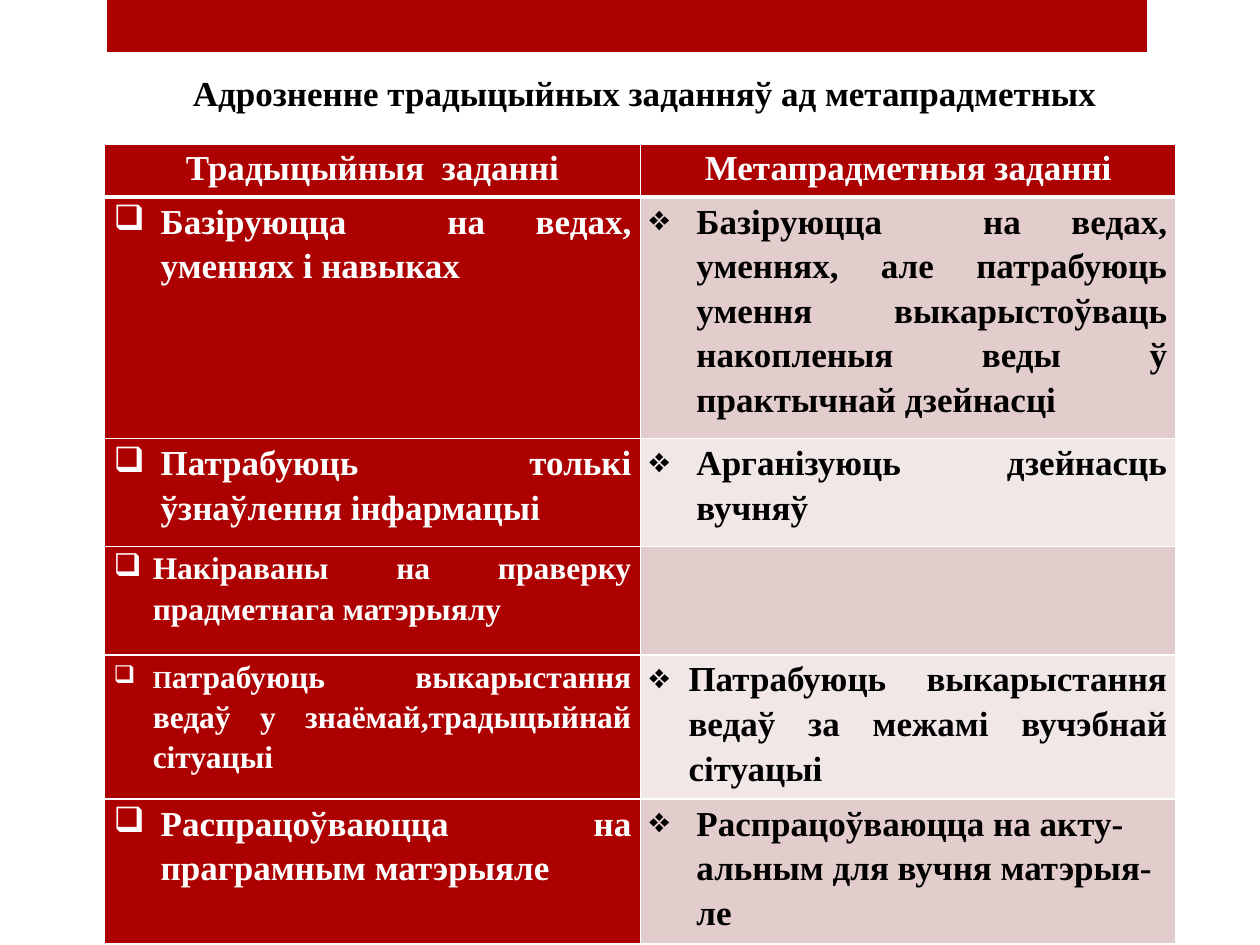
from dataclasses import dataclass

from lxml.etree import SubElement
from pptx import Presentation
from pptx.dml.color import RGBColor
from pptx.enum.shapes import MSO_SHAPE
from pptx.enum.text import MSO_ANCHOR, PP_ALIGN
from pptx.oxml.ns import qn
from pptx.util import Cm, Pt

FONT = "Times New Roman"
RED = RGBColor(0xAD, 0x01, 0x01)
ROSE = RGBColor(0xE3, 0xCC, 0xCC)
PALE = RGBColor(0xF1, 0xE7, 0xE7)
WHITE = RGBColor(0xFF, 0xFF, 0xFF)
BLACK = RGBColor(0, 0, 0)
BULLETS = ("❑", "❖")
ROW_HEIGHTS = (1.07, 4.87, 2.18, 2.18, 2.91, 2.91)
COLUMN_WIDTH = 10.8


@dataclass(frozen=True)
class Entry:
    """Wording and typography of one table cell."""

    text: str
    size: int = 20
    indent: float = 0.95
    align: PP_ALIGN = PP_ALIGN.JUSTIFY
    lead: str = ""


HEADINGS = ("Традыцыйныя  заданні", "Метапрадметныя заданні")
ROWS = (
    (
        Entry("Базіруюцца  на ведах, уменнях і навыках"),
        Entry("Базіруюцца  на ведах, уменнях, але патрабуюць умення "
              "выкарыстоўваць накопленыя веды ў практычнай дзейнасці"),
    ),
    (
        Entry("Патрабуюць толькі ўзнаўлення інфармацыі"),
        Entry("Арганізуюць дзейнасць вучняў"),
    ),
    (Entry("Накіраваны на праверку прадметнага матэрыялу", 18, 0.79), None),
    (
        Entry("атрабуюць выкарыстання ведаў у знаёмай,традыцыйнай сітуацыі",
              18, 0.79, lead="П"),
        Entry("Патрабуюць выкарыстання ведаў за межамі вучэбнай сітуацыі",
              indent=0.79),
    ),
    (
        Entry("Распрацоўваюцца на праграмным матэрыяле"),
        Entry("Распрацоўваюцца на акту-альным для вучня матэрыя-ле",
              align=PP_ALIGN.LEFT),
    ),
)


def style_span(span, size: int, color: RGBColor) -> None:
    """Apply the bold serif style to a run."""
    span.font.name = FONT
    span.font.size = Pt(size)
    span.font.bold = True
    span.font.color.rgb = color


def paint_cell(cell, fill: RGBColor, top: int = 1, bottom: int = 1) -> None:
    """Give a cell its white borders, fill and margins."""
    properties = cell._tc.get_or_add_tcPr()
    for side, width in (("L", 1), ("R", 1), ("T", top), ("B", bottom)):
        line = SubElement(properties, qn(f"a:ln{side}"), w=str(Pt(width)))
        solid = SubElement(line, qn("a:solidFill"))
        SubElement(solid, qn("a:srgbClr"), val=str(WHITE))
    cell.fill.solid()
    cell.fill.fore_color.rgb = fill
    cell.margin_left = cell.margin_right = Cm(0.18)
    cell.margin_top = cell.margin_bottom = 0


def write_cell(cell, entry: Entry, color: RGBColor, bullet: str = "") -> None:
    """Write an entry as one paragraph, with a hanging bullet if given."""
    para = cell.text_frame.paragraphs[0]
    para.text = entry.lead or entry.text
    style_span(para.runs[0], 14 if entry.lead else entry.size, color)
    if entry.lead:
        span = para.add_run()
        span.text = entry.text
        style_span(span, entry.size, color)
    para.alignment = entry.align
    para.line_spacing = 1.15
    if bullet:
        properties = para._p.get_or_add_pPr()
        properties.set("marL", str(Cm(entry.indent)))
        properties.set("indent", str(-Cm(entry.indent)))
        SubElement(properties, qn("a:buChar"), char=bullet)


def add_bar(page) -> None:
    """Draw the red bar at the top edge."""
    bar = page.shapes.add_shape(
        MSO_SHAPE.RECTANGLE, Cm(2.16), 0, Cm(20.96), Cm(1.05))
    bar.shadow.inherit = False
    bar.fill.solid()
    bar.fill.fore_color.rgb = RED
    bar.line.fill.background()


def add_comparison(page) -> None:
    """Build the table that compares the two kinds of tasks."""
    table = page.shapes.add_table(
        len(ROW_HEIGHTS), len(HEADINGS), Cm(2.11), Cm(2.9),
        Cm(COLUMN_WIDTH * len(HEADINGS)), Cm(sum(ROW_HEIGHTS))).table
    for row, height in zip(table.rows, ROW_HEIGHTS):
        row.height = Cm(height)
    for index, heading in enumerate(HEADINGS):
        table.columns[index].width = Cm(COLUMN_WIDTH)
        cell = table.cell(0, index)
        paint_cell(cell, RED, bottom=3)
        write_cell(cell, Entry(heading, align=PP_ALIGN.CENTER), WHITE)
    for number, entries in enumerate(ROWS, start=1):
        fills = (RED, ROSE if number % 2 else PALE)
        for index, entry in enumerate(entries):
            cell = table.cell(number, index)
            paint_cell(cell, fills[index], top=3 if number == 1 else 1)
            if entry:
                write_cell(cell, entry, (WHITE, BLACK)[index], BULLETS[index])


def add_title(page) -> None:
    """Add the centred title."""
    box = page.shapes.add_textbox(Cm(1.7), Cm(1.32), Cm(22.6), Cm(1.88))
    frame = box.text_frame
    frame.word_wrap = True
    frame.vertical_anchor = MSO_ANCHOR.TOP
    frame.text = "Адрозненне традыцыйных заданняў ад метапрадметных"
    para = frame.paragraphs[0]
    para.alignment = PP_ALIGN.CENTER
    style_span(para.runs[0], 20, BLACK)


def main() -> None:
    """Build and save the deck."""
    deck = Presentation()
    deck.slide_width, deck.slide_height = Cm(25.4), Cm(19.05)
    page = deck.slides.add_slide(deck.slide_layouts[6])
    add_bar(page)
    add_comparison(page)
    add_title(page)
    deck.save("out.pptx")


if __name__ == "__main__":
    main()
